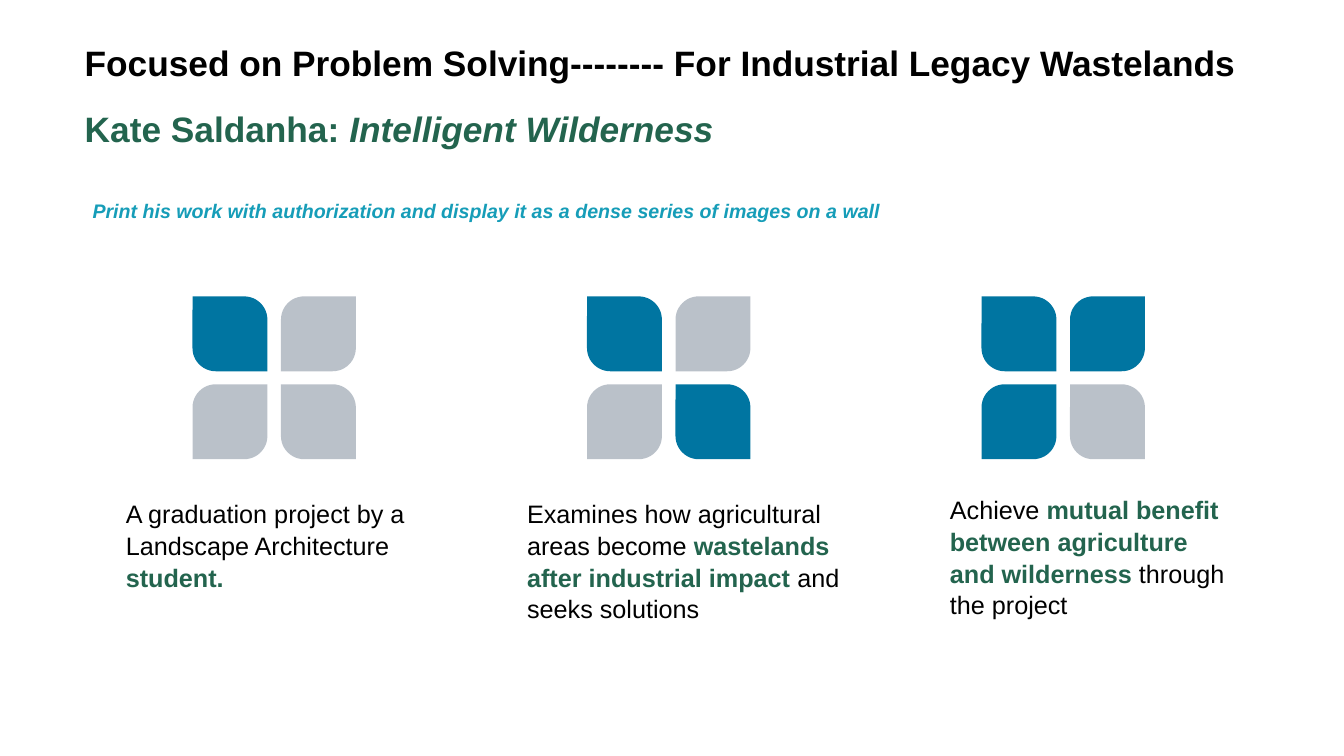
import pptx
import pptx.util
import pptx.dml.color
import pptx.enum.shapes
import pptx.enum.text
import pptx.oxml
import pptx.oxml.ns

Pt = pptx.util.Pt
BLACK, GREEN, TEAL = "000000", "23644E", "169DB8"
BLUE, GREY = "0075A1", "778495"


def tint(target, code):
    """Set a fill or font colour from a hex string."""
    if hasattr(target, "solid"):
        target.solid()
        target = target.fore_color
    else:
        target = target.color
    target.rgb = pptx.dml.color.RGBColor.from_string(code)


class Deck:
    """Hold the style and the current slide."""

    font = "Arial"
    curve = 0.31

    def __init__(self, width, height):
        self.show = pptx.Presentation()
        self.show.slide_width = Pt(width)
        self.show.slide_height = Pt(height)
        self.slide = self.show.slides.add_slide(self.show.slide_layouts[5])

    def label(self, shape, runs, size, space, anchor="TOP", bold=None):
        """Fill a shape with one paragraph of (text, colour, bold, italic) runs."""
        frame = shape.text_frame
        frame.word_wrap = True
        frame.auto_size = pptx.enum.text.MSO_AUTO_SIZE.NONE
        frame.vertical_anchor = pptx.enum.text.MSO_ANCHOR[anchor]
        para = frame.paragraphs[0]
        para.alignment = pptx.enum.text.PP_ALIGN.LEFT
        para.line_spacing = space
        para.font.name = self.font
        para.font.size = Pt(size)
        para.font.bold = bold
        for text, code, heavy, slant in runs:
            run = para.add_run()
            run.text = text.rstrip("\n")
            run.font.bold = heavy
            run.font.italic = slant
            tint(run.font, code)
            if text.endswith("\n"):
                para.add_line_break()

    def title(self, x, y, w, h, runs):
        """Place and format the title placeholder."""
        shape = self.slide.shapes.title
        shape.left, shape.top = Pt(x), Pt(y)
        shape.width, shape.height = Pt(w), Pt(h)
        self.label(shape, runs, 25.2, 1.58, "BOTTOM", True)

    def text(self, x, y, w, h, runs, size=18, space=1.05):
        """Add a wrapped text box."""
        box = self.slide.shapes.add_textbox(Pt(x), Pt(y), Pt(w), Pt(h))
        self.label(box, runs, size, space)

    def petal(self, x, y, size, lit, rising):
        """Add a square with two opposite corners rounded."""
        kind = pptx.enum.shapes.MSO_SHAPE.ROUND_2_DIAG_RECTANGLE
        leaf = self.slide.shapes.add_shape(kind, Pt(x), Pt(y), Pt(size), Pt(size))
        leaf.shadow.inherit = False
        leaf.line.fill.background()
        leaf.adjustments[0] = 0 if rising else self.curve
        leaf.adjustments[1] = self.curve if rising else 0
        tint(leaf.fill, BLUE if lit else GREY)
        if not lit:
            shade = leaf.element.find(".//" + pptx.oxml.ns.qn("a:srgbClr"))
            alpha = pptx.oxml.ns.qn("a:alpha")
            shade.append(shade.makeelement(alpha, {"val": "50000"}))

    def flower(self, x, y, lit):
        """Add four petals, of which the listed ones are lit."""
        for i in range(4):
            row, col = divmod(i, 2)
            self.petal(x + col * 63.2, y + row * 62.8, 53.5, i in lit, row == col)


def main():
    """Build and save the slide."""
    deck = Deck(960, 540)
    deck.title(53.3, 33.8, 855.4, 77, [
        ("Focused on Problem Solving-------- For Industrial Legacy Wastelands\n",
         BLACK, True, False),
        ("Kate Saldanha: ", GREEN, True, False),
        ("Intelligent Wilderness", GREEN, True, True),
    ])
    deck.text(59, 133.9, 622, 26, [
        ("Print his work with authorization and display it as a dense series"
         " of images on a wall", TEAL, True, True),
    ], 14, 1.26)

    for i, lit in enumerate([{0}, {0, 3}, {0, 1, 2}]):
        deck.flower(137.5 + i * 281.8, 211.7, lit)

    notes = [
        (82.8, 351.4, 255.6, [
            ("A graduation project by a Landscape Architecture ", False),
            ("student.", True)]),
        (369.4, 351.4, 251.3, [
            ("Examines how agricultural areas become ", False),
            ("wastelands after industrial impact ", True),
            ("and seeks solutions", False)]),
        (671.4, 348.5, 212, [
            ("Achieve ", False),
            ("mutual benefit between agriculture and wilderness ", True),
            ("through the project", False)]),
    ]
    for x, y, w, parts in notes:
        deck.text(x, y, w, 94.3, [
            (text, GREEN if key else BLACK, key, False) for text, key in parts])
    deck.show.save("out.pptx")


if __name__ == "__main__":
    main()
